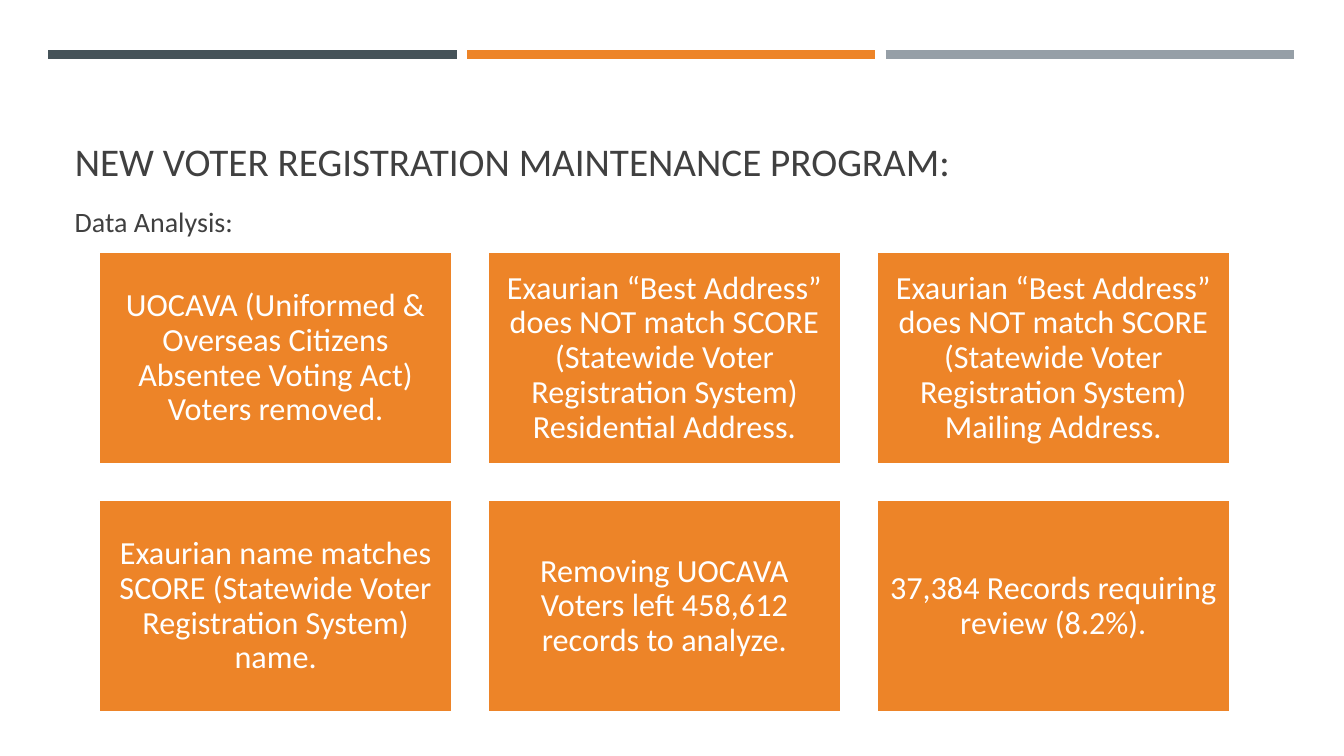
from dataclasses import dataclass

from lxml.etree import SubElement
from pptx import Presentation
from pptx.dml.color import RGBColor
from pptx.enum.shapes import MSO_CONNECTOR, MSO_SHAPE
from pptx.enum.text import MSO_ANCHOR as Anchor, PP_ALIGN as Align
from pptx.oxml.ns import qn
from pptx.slide import Slide
from pptx.text.text import TextFrame
from pptx.util import Cm, Pt

FONT = "Calibri"
ORANGE, SLATE, GREY = "ED8428", "465359", "969FA7"
WHITE, DARK = "FFFFFF", "404040"

# Lengths in centimetres
BAR_LEFT, BAR_TOP, BAR_WIDTH, BAR_PITCH = 1.22, 1.37, 10.29, 10.55
CARD_LEFT, CARD_TOP, CARD_WIDTH, CARD_HEIGHT = 2.49, 6.35, 8.92, 5.36
CARD_PITCH_X, CARD_PITCH_Y, CARD_INSET = 9.8, 6.25, 0.25
COLUMNS = 3


@dataclass
class Bar:
    left: float
    color: str


@dataclass
class Card:
    left: float
    top: float
    text: str


def rgb(color: str) -> RGBColor:
    return RGBColor.from_string(color)


def write_text(frame: TextFrame, text: str, size: float, color: str,
               align: Align, anchor: Anchor) -> None:
    frame.word_wrap = True
    frame.vertical_anchor = anchor
    paragraph = frame.paragraphs[0]
    paragraph.text = text
    paragraph.alignment = align
    paragraph.font.name = FONT
    paragraph.font.size = Pt(size)
    paragraph.font.color.rgb = rgb(color)


def draw_bar(slide: Slide, bar: Bar) -> None:
    line = slide.shapes.add_connector(
        MSO_CONNECTOR.STRAIGHT, Cm(bar.left), Cm(BAR_TOP),
        Cm(bar.left + BAR_WIDTH), Cm(BAR_TOP))
    line.line.color.rgb = rgb(bar.color)
    line.line.width = Pt(6.5)
    SubElement(line._element.spPr, qn("a:effectLst"))


def draw_card(slide: Slide, card: Card) -> None:
    shape = slide.shapes.add_shape(
        MSO_SHAPE.RECTANGLE, Cm(card.left), Cm(card.top),
        Cm(CARD_WIDTH), Cm(CARD_HEIGHT))
    shape.shadow.inherit = False
    shape.fill.solid()
    shape.fill.fore_color.rgb = rgb(ORANGE)
    shape.line.color.rgb = rgb(WHITE)
    shape.line.width = Pt(1.75)
    frame = shape.text_frame
    frame.margin_left = frame.margin_right = Cm(CARD_INSET)
    frame.margin_top = frame.margin_bottom = Cm(CARD_INSET)
    write_text(frame, card.text, 23, WHITE, Align.CENTER, Anchor.MIDDLE)
    frame.paragraphs[0].line_spacing = 0.9


CARD_TEXTS = [
    "UOCAVA (Uniformed & Overseas Citizens Absentee Voting Act) Voters removed.",
    "Exaurian “Best Address” does NOT match SCORE "
    "(Statewide Voter Registration System) Residential Address.",
    "Exaurian “Best Address” does NOT match SCORE "
    "(Statewide Voter Registration System) Mailing Address.",
    "Exaurian name matches SCORE (Statewide Voter Registration System) name.",
    "Removing UOCAVA Voters left 458,612 records to analyze.",
    "37,384 Records requiring review (8.2%).",
]


def main() -> None:
    presentation = Presentation()
    presentation.slide_width, presentation.slide_height = Cm(33.87), Cm(19.05)
    slide = presentation.slides.add_slide(presentation.slide_layouts[5])

    # Coloured bars along the top
    for index, color in enumerate([SLATE, ORANGE, GREY]):
        draw_bar(slide, Bar(BAR_LEFT + index * BAR_PITCH, color))

    # Title and subtitle
    title = slide.shapes.title
    title.left, title.top = Cm(1.63), Cm(2.03)
    title.width, title.height = Cm(30.63), Cm(2.74)
    write_text(title.text_frame, "NEW VOTER REGISTRATION MAINTENANCE PROGRAM:",
               28, DARK, Align.LEFT, Anchor.BOTTOM)
    subtitle = slide.shapes.add_textbox(Cm(1.63), Cm(4.8), Cm(14.43), Cm(1.55))
    write_text(subtitle.text_frame, "Data Analysis:",
               20, DARK, Align.LEFT, Anchor.MIDDLE)

    # Grid of cards
    for index, text in enumerate(CARD_TEXTS):
        row, column = divmod(index, COLUMNS)
        draw_card(slide, Card(CARD_LEFT + column * CARD_PITCH_X,
                              CARD_TOP + row * CARD_PITCH_Y, text))

    presentation.save("out.pptx")


if __name__ == "__main__":
    main()
